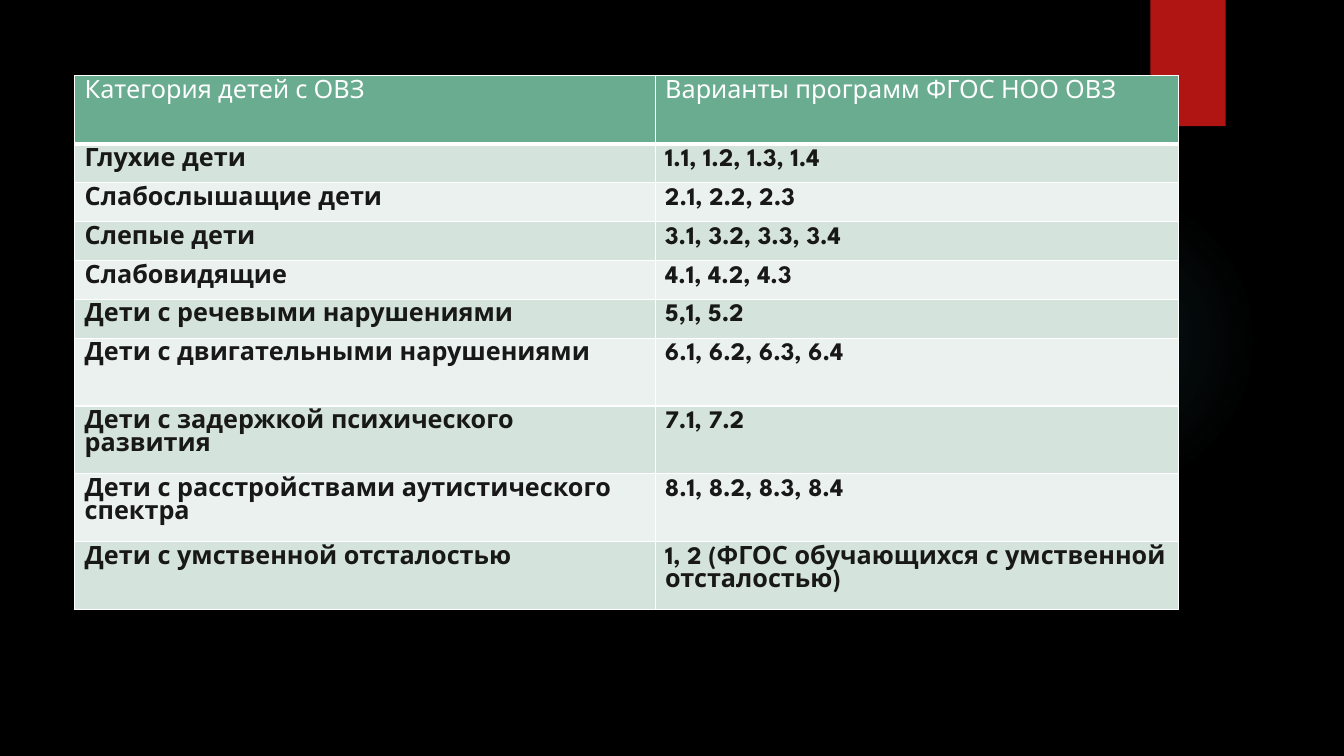
from lxml import etree
from pptx import Presentation
from pptx.dml.color import RGBColor
from pptx.enum.shapes import MSO_SHAPE as Shape
from pptx.oxml import parse_xml
from pptx.oxml.ns import qn
from pptx.util import Cm, Pt

# Content: category of children, programme variants
HEADER = ("Категория детей с ОВЗ", "Варианты программ ФГОС НОО ОВЗ")
CATEGORIES = [
    ("Глухие дети", "1.1, 1.2, 1.3, 1.4"),
    ("Слабослышащие дети", "2.1, 2.2, 2.3"),
    ("Слепые дети", "3.1, 3.2, 3.3, 3.4"),
    ("Слабовидящие", "4.1, 4.2, 4.3"),
    ("Дети с речевыми нарушениями", "5,1, 5.2"),
    ("Дети с двигательными нарушениями", "6.1, 6.2, 6.3, 6.4"),
    ("Дети с задержкой психического развития", "7.1, 7.2"),
    ("Дети с расстройствами аутистического спектра", "8.1, 8.2, 8.3, 8.4"),
    ("Дети с умственной отсталостью",
     "1, 2 (ФГОС обучающихся с умственной отсталостью)"),
]
SHORT_ROWS = range(1, 6)

# Look
BLACK = RGBColor(0x00, 0x00, 0x00)
WHITE = RGBColor(0xFF, 0xFF, 0xFF)
INK = RGBColor(0x18, 0x18, 0x18)
RED = RGBColor(0xB0, 0x15, 0x13)
TEAL = RGBColor(0x50, 0xB9, 0xC1)
GREEN = RGBColor(0x6A, 0xAC, 0x90)
BANDS = (RGBColor(0xEB, 0xF1, 0xEE), RGBColor(0xD4, 0xE3, 0xDB))
GLOW_STOPS = ((0, 7), (36, 6), (69, 0))  # position %, opacity %
COLUMN_WIDTHS = (Cm(14.63), Cm(13.18))
SHORT, TALL = Cm(0.98), Cm(1.71)
BODY_FONT = {"name": "League Spartan", "size": Pt(18), "bold": True}
HEADER_FONT = {**BODY_FONT, "bold": False}
A_NS = "http://schemas.openxmlformats.org/drawingml/2006/main"


def add_plain_shape(slide, kind, left, top, width, height):
    shape = slide.shapes.add_shape(kind, left, top, width, height)
    shape.shadow.inherit = False
    shape.line.fill.background()
    return shape


def fill_with_glow(shape):
    stops = "".join(
        f'<a:gs pos="{pos * 1000}"><a:srgbClr val="{TEAL}">'
        f'<a:alpha val="{opacity * 1000}"/></a:srgbClr></a:gs>'
        for pos, opacity in GLOW_STOPS)
    gradient = parse_xml(
        f'<a:gradFill xmlns:a="{A_NS}"><a:gsLst>{stops}</a:gsLst>'
        '<a:path path="circle"><a:fillToRect l="50000" t="50000" '
        'r="50000" b="50000"/></a:path></a:gradFill>')
    shape.element.spPr.find(qn("a:prstGeom")).addnext(gradient)


def set_borders(cell, bottom):
    properties = cell._tc.get_or_add_tcPr()
    for place, (side, width) in enumerate(
            (("L", 1), ("R", 1), ("T", 1), ("B", bottom))):
        line = etree.Element(qn(f"a:ln{side}"), w=str(Pt(width)))
        solid = etree.SubElement(line, qn("a:solidFill"))
        etree.SubElement(solid, qn("a:srgbClr"), val=str(WHITE))
        properties.insert(place, line)


def write_cell(cell, text, fill, ink, font_format, bottom):
    cell.fill.solid()
    cell.fill.fore_color.rgb = fill
    set_borders(cell, bottom)
    cell.text = text
    font = cell.text_frame.paragraphs[0].runs[0].font
    for attribute, value in font_format.items():
        setattr(font, attribute, value)
    font.color.rgb = ink


def main():
    deck = Presentation()
    deck.slide_width, deck.slide_height = Cm(33.87), Cm(19.05)
    slide = deck.slides.add_slide(deck.slide_layouts[6])
    slide.background.fill.solid()
    slide.background.fill.fore_color.rgb = BLACK

    # Backdrop: faint glow and red tab
    glow = add_plain_shape(slide, Shape.OVAL, Cm(23.9), Cm(4.65), Cm(7.82), Cm(7.82))
    fill_with_glow(glow)
    tab = add_plain_shape(slide, Shape.RECTANGLE, Cm(28.99), 0, Cm(1.9), Cm(3.18))
    tab.fill.solid()
    tab.fill.fore_color.rgb = RED

    # Table of programme variants
    rows = [HEADER, *CATEGORIES]
    heights = [SHORT if r in SHORT_ROWS else TALL for r in range(len(rows))]
    programmes = slide.shapes.add_table(
        len(rows), len(HEADER), Cm(1.88), Cm(1.91),
        sum(COLUMN_WIDTHS), sum(heights)).table
    for column, width in zip(programmes.columns, COLUMN_WIDTHS):
        column.width = width
    for r, (texts, height) in enumerate(zip(rows, heights)):
        programmes.rows[r].height = height
        if r == 0:
            style = (GREEN, WHITE, HEADER_FONT, 3)
        else:
            style = (BANDS[r % 2], INK, BODY_FONT, 1)
        for c, text in enumerate(texts):
            write_cell(programmes.cell(r, c), text, *style)

    deck.save("out.pptx")


if __name__ == "__main__":
    main()
